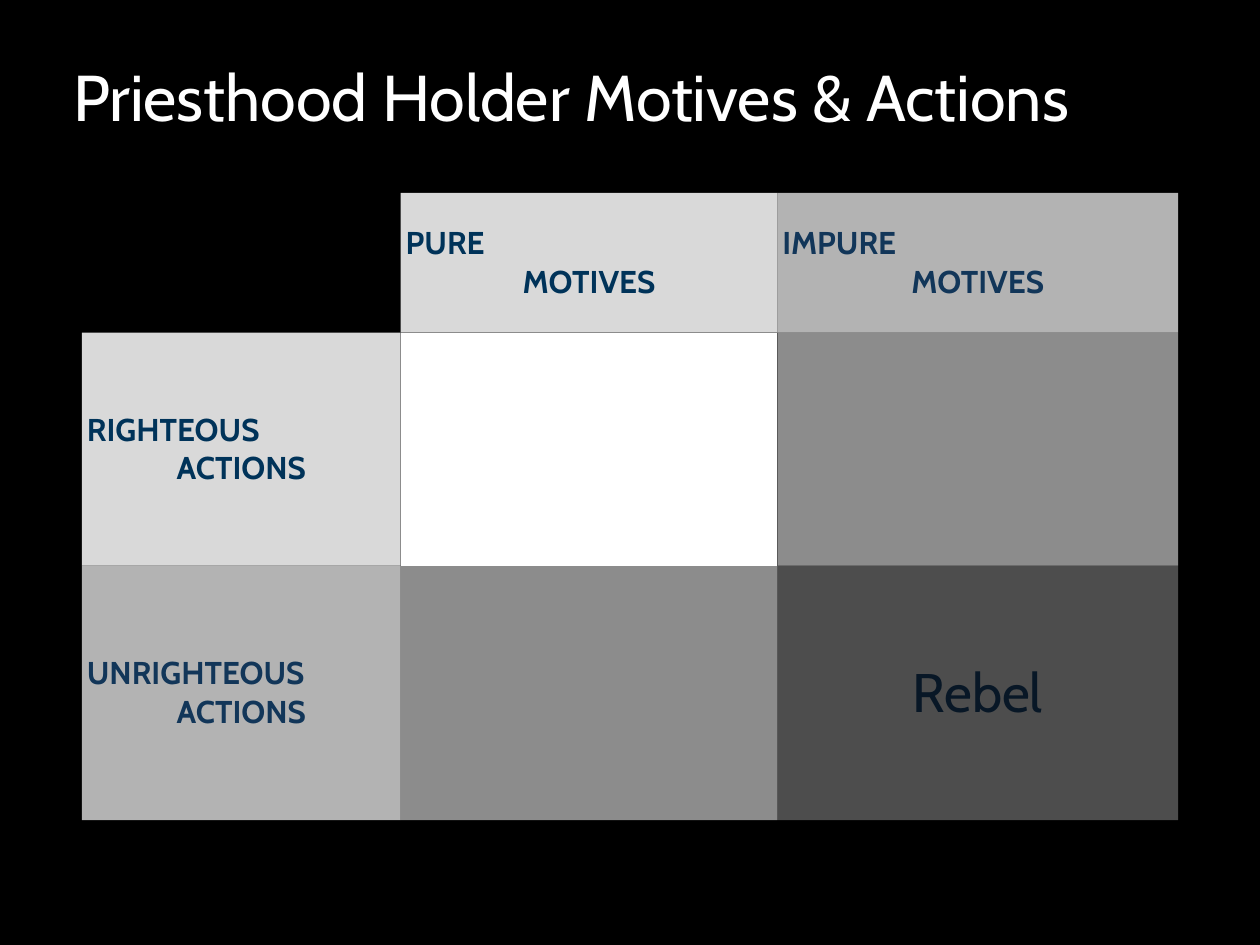
from lxml import etree
from pptx import Presentation
from pptx.dml.color import RGBColor
from pptx.enum.text import MSO_ANCHOR, PP_ALIGN
from pptx.oxml.ns import qn
from pptx.util import Inches, Pt

MIDDLE = MSO_ANCHOR.MIDDLE
LEFT, CENTER = PP_ALIGN.LEFT, PP_ALIGN.CENTER
PLAIN = "{2D5ABB26-0587-4C30-8999-92F81FD0307C}"

TITLE = "Priesthood Holder Motives & Actions"
COLS = [2.53, 2.99, 3.18]
ROWS = [1.11, 1.85, 2.02]
NAVY = {"size": 18, "bold": True, "color": "003359"}
SLATE = {"size": 18, "bold": True, "color": "123659"}
DARK = {"size": 31, "bold": False, "color": "081726"}
GRID = [
    [([], None, 0, "LT"),
     (["PURE", "MOTIVES"], NAVY, 85, "RT"),
     (["IMPURE", "MOTIVES"], SLATE, 70, "LRT")],
    [(["RIGHTEOUS", "ACTIONS"], NAVY, 85, "LB"),
     ([], None, 100, "RB"),
     ([], None, 55, "LRB")],
    [(["UNRIGHTEOUS", "ACTIONS"], SLATE, 70, "LTB"),
     ([], None, 55, "RTB"),
     (["Rebel"], DARK, 30, "LRTB")],
]


def rgb(code):
    return RGBColor.from_string(code)


def write(para, text, size, color, bold=False, align=LEFT):
    para.alignment = align
    run = para.add_run()
    run.text = text
    for name, value in {"name": "Cabin", "size": Pt(size), "bold": bold}.items():
        setattr(run.font, name, value)
    run.font.color.rgb = rgb(color)


def set_inset(owner, inset):
    for side in ("left", "right", "top", "bottom"):
        setattr(owner, "margin_" + side, Inches(inset))
    owner.vertical_anchor = MIDDLE


def set_edges(cell, sides):
    props = cell._tc.get_or_add_tcPr()
    for spot, side in enumerate(sides):
        line = etree.Element(qn("a:ln" + side), w="0")
        fill = etree.SubElement(line, qn("a:solidFill"))
        etree.SubElement(fill, qn("a:srgbClr"), val="000000")
        etree.SubElement(line, qn("a:prstDash"), val="sysDashDotDot")
        props.insert(spot, line)


def set_fill(cell, alpha):
    if not alpha:
        cell.fill.background()
        return
    cell.fill.solid()
    cell.fill.fore_color.rgb = rgb("FFFFFF")
    if alpha < 100:
        color = cell._tc.tcPr.find(qn("a:solidFill"))[0]
        etree.SubElement(color, qn("a:alpha"), val=str(alpha * 1000))


def fill_cell(cell, lines, style, alpha, sides):
    set_inset(cell, 0.04)
    frame = cell.text_frame
    for spot, text in enumerate(lines):
        para = frame.add_paragraph() if spot else frame.paragraphs[0]
        last = spot == len(lines) - 1
        write(para, text, align=CENTER if last else LEFT, **style)
    set_fill(cell, alpha)
    set_edges(cell, sides)


def add_grid(slide):
    spots = [Inches(v) for v in (0.65, 1.53, sum(COLS), sum(ROWS))]
    table = slide.shapes.add_table(len(ROWS), len(COLS), *spots).table
    table.first_row = table.horz_banding = False
    table._tbl.tblPr.find(qn("a:tableStyleId")).text = PLAIN
    for col, width in zip(table.columns, COLS):
        col.width = Inches(width)
    for row, height, items in zip(table.rows, ROWS, GRID):
        row.height = Inches(height)
        for cell, item in zip(row.cells, items):
            fill_cell(cell, *item)


def add_title(slide):
    left, top, width, height = [Inches(v) for v in (0.58, 0.43, 9.17, 0.66)]
    right, base = left + width, top + height
    path = slide.shapes.build_freeform(left, top)
    path.add_line_segments([(right, top), (right, base), (left, base)])
    shape = path.convert_to_shape()
    shape.shadow.inherit = False
    shape.fill.background()
    shape.line.fill.background()
    frame = shape.text_frame
    frame.word_wrap = True
    set_inset(frame, 0)
    write(frame.paragraphs[0], TITLE, 37, "FFFFFF")


def main():
    deck = Presentation()
    deck.slide_width, deck.slide_height = Inches(10), Inches(7.5)
    slide = deck.slides.add_slide(deck.slide_layouts[6])
    slide.background.fill.solid()
    slide.background.fill.fore_color.rgb = rgb("000000")
    add_grid(slide)
    add_title(slide)
    deck.save("out.pptx")


if __name__ == "__main__":
    main()
